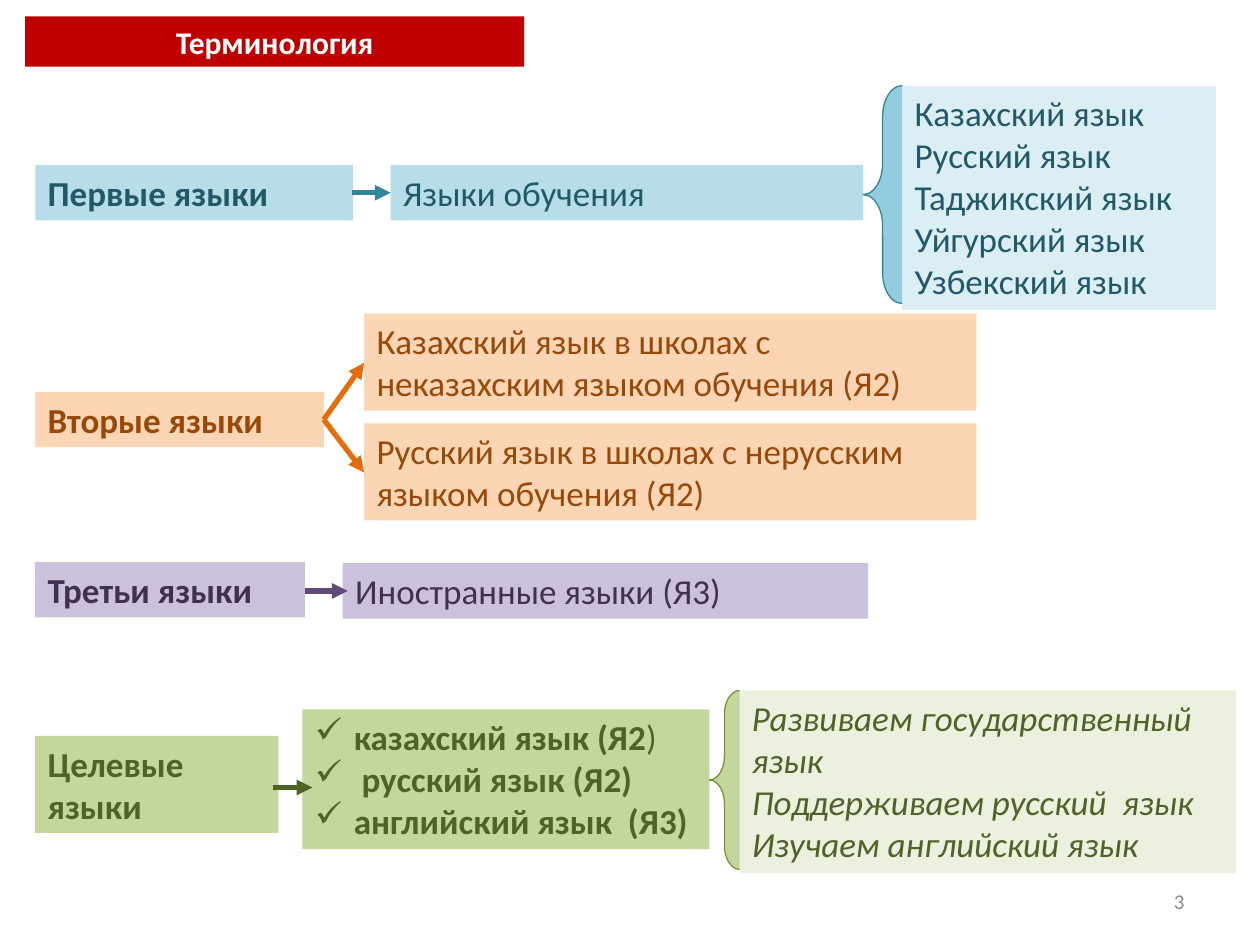
import pptx
import pptx.util
import pptx.dml.color
import pptx.enum.shapes
import pptx.enum.text
import lxml.etree

Inches = pptx.util.Inches
Pt = pptx.util.Pt
Align = pptx.enum.text.PP_ALIGN
Shapes = pptx.enum.shapes


def tint(part, code):
    if hasattr(part, "solid"):
        part.solid()
        part = part.fore_color
    part.rgb = pptx.dml.color.RGBColor.from_string(code)


def write(frame, lines, color, size=20, align=Align.LEFT, **style):
    frame.word_wrap = True
    for i, line in enumerate(lines):
        para = frame.paragraphs[0] if i == 0 else frame.add_paragraph()
        para.alignment = align
        runs = [(line, {})] if isinstance(line, str) else line
        for text, extra in runs:
            run = para.add_run()
            run.text = text
            form = {"name": "Calibri", "size": Pt(size), "bold": False, **style, **extra}
            for key, value in form.items():
                setattr(run.font, key, value)
            tint(run.font.color, color)


deck = pptx.Presentation()
deck.slide_width, deck.slide_height = Inches(10), Inches(7.5)
slide = deck.slides.add_slide(deck.slide_layouts[5])

title = slide.shapes.title
place = {"left": 0.2, "top": 0.13, "width": 3.96, "height": 0.4}
for key, value in place.items():
    setattr(title, key, Inches(value))
tint(title.fill, "C00000")
title.text_frame.auto_size = pptx.enum.text.MSO_AUTO_SIZE.NONE
title.text_frame.vertical_anchor = pptx.enum.text.MSO_ANCHOR.MIDDLE
write(title.text_frame, ["Терминология"], "FFFFFF", 18, Align.CENTER, bold=True)

bold, slant = {"bold": True}, {"italic": True}
blue, peach, lilac, green = "B7DEE8", "FCD5B5", "CCC1DA", "C3D69B"
navy, brown, plum, olive = "215968", "984807", "403152", "4F6228"
goals = [
    [("казахский язык (Я2", bold), (")", {})],
    [(" ", {}), ("русский язык (Я2)", bold)],
    [("английский язык  (Я3)", bold)],
]
tongues = [name + " язык" for name in
           ("Казахский", "Русский", "Таджикский", "Уйгурский", "Узбекский")]
tasks = ["Развиваем государственный язык", "Поддерживаем русский  язык",
         "Изучаем английский язык"]

boxes = [
    (0.28, 1.31, 2.52, 0.44, blue, navy, bold, ["Первые языки"]),
    (3.1, 1.31, 3.75, 0.44, blue, navy, {}, ["Языки обучения"]),
    (7.16, 0.68, 2.49, 1.78, "DBEEF4", navy, {}, tongues),
    (0.28, 3.11, 2.29, 0.44, peach, brown, bold, ["Вторые языки"]),
    (2.89, 2.49, 4.86, 0.77, peach, brown, {},
     ["Казахский язык в школах с неказахским языком обучения (Я2)"]),
    (2.89, 3.36, 4.86, 0.77, peach, brown, {},
     ["Русский язык в школах с нерусским языком обучения (Я2)"]),
    (0.28, 4.46, 2.14, 0.44, lilac, plum, bold, ["Третьи языки"]),
    (2.72, 4.47, 4.17, 0.44, lilac, plum, {}, ["Иностранные языки (Я3)"]),
    (2.4, 5.63, 3.23, 1.11, green, olive, {}, goals),
    (0.28, 5.84, 1.93, 0.77, green, olive, bold, ["Целевые языки"]),
    (5.87, 5.48, 3.94, 1.45, "EBF1DE", olive, slant, tasks),
]
for *rect, fill, ink, style, lines in boxes:
    box = slide.shapes.add_textbox(*map(Inches, rect))
    tint(box.fill, fill)
    write(box.text_frame, lines, ink, **style)
    if lines is goals:
        for para in box.text_frame.paragraphs:
            props = para._p.get_or_add_pPr()
            props.set("marL", str(Inches(0.31)))
            props.set("indent", str(-Inches(0.31)))
            mark = lxml.etree.SubElement(props, pptx.oxml.ns.qn("a:buChar"))
            mark.set("char", "✓")

braces = [
    (6.85, 0.68, 0.31, 1.73, "93CDDD", "31859C"),
    (5.63, 5.48, 0.24, 1.42, green, "77933C"),
]
for *rect, fill, edge in braces:
    brace = slide.shapes.add_shape(Shapes.MSO_SHAPE.LEFT_BRACE, *map(Inches, rect))
    brace.shadow.inherit = False
    brace.adjustments[0] = 0.79
    tint(brace.fill, fill)
    tint(brace.line.fill, edge)
    brace.line.width = Pt(0.75)

links = [
    (2.79, 1.53, 3.1, 1.53, "31859C"),
    (2.57, 3.33, 2.89, 2.88, "E46C0A"),
    (2.57, 3.33, 2.89, 3.75, "E46C0A"),
    (2.42, 4.69, 2.76, 4.69, "604A7B"),
    (2.17, 6.25, 2.48, 6.25, olive),
]
for *ends, ink in links:
    link = slide.shapes.add_connector(Shapes.MSO_CONNECTOR.STRAIGHT, *map(Inches, ends))
    tint(link.line.fill, ink)
    link.line.width = Pt(3)
    tip = lxml.etree.SubElement(link.line._get_or_add_ln(), pptx.oxml.ns.qn("a:tailEnd"))
    tip.set("type", "triangle")
    lxml.etree.SubElement(link._element.spPr, pptx.oxml.ns.qn("a:effectLst"))

page = slide.shapes.add_textbox(*map(Inches, (7.17, 6.95, 2.33, 0.4)))
page.text_frame.vertical_anchor = pptx.enum.text.MSO_ANCHOR.MIDDLE
write(page.text_frame, ["3"], "8C8C8C", 12, Align.RIGHT)

deck.save("out.pptx")
